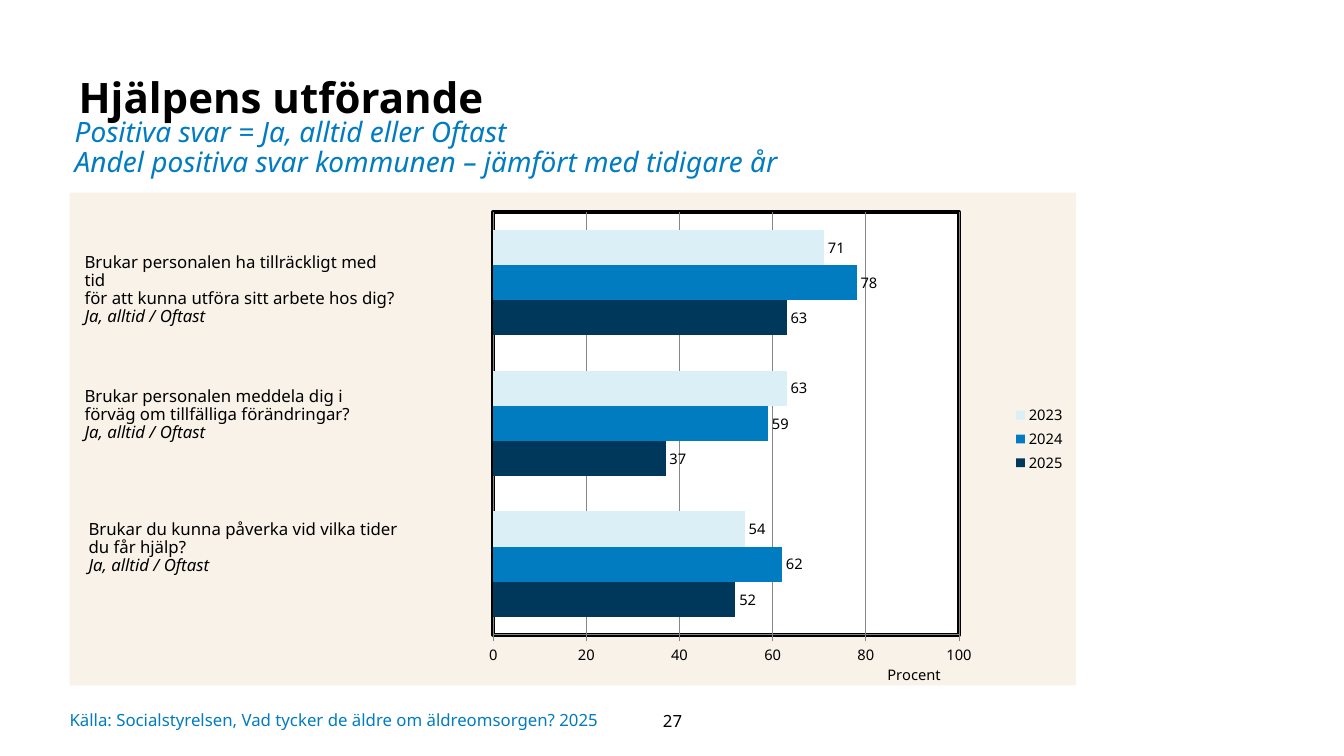
from dataclasses import dataclass

from lxml import etree
from pptx import Presentation
from pptx.chart.chart import Chart
from pptx.chart.data import CategoryChartData
from pptx.dml.color import RGBColor
from pptx.enum.chart import XL_CHART_TYPE as ChartType
from pptx.enum.chart import XL_LABEL_POSITION as LabelSpot
from pptx.enum.chart import XL_LEGEND_POSITION as LegendSpot
from pptx.enum.chart import XL_TICK_MARK as TickMark
from pptx.enum.text import MSO_ANCHOR as Anchor
from pptx.enum.text import MSO_AUTO_SIZE as AutoSize
from pptx.enum.text import PP_ALIGN as Align
from pptx.oxml import parse_xml
from pptx.oxml.ns import nsdecls, qn
from pptx.slide import Slide
from pptx.text.text import TextFrame
from pptx.util import Emu, Pt

PX = 9144  # 100 px to the inch


@dataclass(frozen=True)
class Theme:
    font: str = "Noto Sans"
    black: str = "000000"
    blue: str = "017CC1"
    navy: str = "00385C"
    pale: str = "DBF0F6"
    sand: str = "F8F2E8"
    white: str = "FFFFFF"
    grid: str = "868686"
    title_size: float = 30
    subtitle_size: float = 20
    text_size: float = 12
    chart_size: float = 10.5


@dataclass(frozen=True)
class Area:
    left: int
    top: int
    width: int
    height: int

    def emu(self) -> tuple[Emu, ...]:
        return tuple(Emu(n * PX) for n in (self.left, self.top, self.width, self.height))


@dataclass(frozen=True)
class Question:
    text: str
    area: Area


@dataclass(frozen=True)
class Year:
    name: str
    shares: tuple[int, ...]
    color: str


THEME = Theme()
ANSWER = "Ja, alltid / Oftast"
QUESTIONS = (
    Question("Brukar personalen ha tillräckligt med tid\vför att kunna utföra sitt arbete hos dig?",
             Area(74, 247, 331, 91)),
    Question("Brukar personalen meddela dig i förväg om tillfälliga förändringar?",
             Area(74, 380, 330, 71)),
    Question("Brukar du kunna påverka vid vilka tider du får hjälp?",
             Area(78, 512, 330, 71)),
)
YEARS = (
    Year("2025", (52, 37, 63), THEME.navy),
    Year("2024", (62, 59, 78), THEME.blue),
    Year("2023", (54, 63, 71), THEME.pale),
)


# Text
def format_font(font, size: float, color: str = THEME.black,
                bold: bool = False, italic: bool = False) -> None:
    font.name, font.size = THEME.font, Pt(size)
    font.bold, font.italic = bold, italic
    font.color.rgb = RGBColor.from_string(color)


def write(frame: TextFrame, text: str, *, size: float = THEME.text_size,
          color: str = THEME.black, bold: bool = False, italic: bool = False,
          align: Align = Align.LEFT, spacing: float = 1.0, new: bool = False) -> None:
    para = frame.add_paragraph() if new else frame.paragraphs[0]
    para.text = text
    para.alignment, para.line_spacing = align, spacing
    para.space_before = para.space_after = Pt(0)
    for span in para.runs:
        format_font(span.font, size, color, bold, italic)


def set_frame(frame: TextFrame, insets: tuple[int, int, int, int],
              anchor: Anchor = Anchor.TOP, fit: AutoSize = AutoSize.NONE) -> TextFrame:
    frame.word_wrap, frame.auto_size, frame.vertical_anchor = True, fit, anchor
    (frame.margin_left, frame.margin_top,
     frame.margin_right, frame.margin_bottom) = (Emu(n * PX) for n in insets)
    return frame


def add_box(page: Slide, area: Area, insets: tuple[int, int, int, int] = (10, 5, 10, 5),
            anchor: Anchor = Anchor.TOP, fit: AutoSize = AutoSize.NONE) -> TextFrame:
    box = page.shapes.add_textbox(*area.emu())
    return set_frame(box.text_frame, insets, anchor, fit)


# Chart parts that need XML
def shape_format(fill: str, line: str) -> etree._Element:
    return parse_xml(
        f'<c:spPr {nsdecls("c", "a")}><a:solidFill><a:srgbClr val="{fill}"/></a:solidFill>'
        f'{line}</c:spPr>')


def place(parent: etree._Element, index: int, inner: bool = False, **fractions: float) -> None:
    for old in parent.findall(qn("c:layout")):
        parent.remove(old)
    target = '<c:layoutTarget val="inner"/>' if inner else ""
    modes = '<c:xMode val="edge"/><c:yMode val="edge"/>'
    values = "".join(f'<c:{key} val="{value}"/>' for key, value in fractions.items())
    parent.insert(index, parse_xml(
        f'<c:layout {nsdecls("c")}><c:manualLayout>{target}{modes}{values}'
        '</c:manualLayout></c:layout>'))


def format_areas(chart: Chart) -> None:
    space = chart.element
    space.find(qn("c:chart")).addnext(shape_format(THEME.sand, "<a:ln><a:noFill/></a:ln>"))
    plot_area = space.find(f'{qn("c:chart")}/{qn("c:plotArea")}')
    place(plot_area, 0, inner=True, x=0.421, y=0.04, w=0.463, h=0.857)
    plot_area.append(shape_format(
        THEME.white, '<a:ln w="38100" cmpd="dbl"><a:solidFill>'
        f'<a:srgbClr val="{THEME.black}"/></a:solidFill></a:ln>'))


def format_axes(chart: Chart) -> None:
    chart.category_axis.visible = False
    axis = chart.value_axis
    axis.minimum_scale, axis.maximum_scale, axis.major_unit = 0, 100, 20
    axis.major_tick_mark, axis.minor_tick_mark = TickMark.OUTSIDE, TickMark.NONE
    axis.has_major_gridlines = True
    for line in (axis.format.line, axis.major_gridlines.format.line):
        line.color.rgb = RGBColor.from_string(THEME.grid)
        line.width = Pt(0.75)
    format_font(axis.tick_labels.font, THEME.chart_size)
    write(axis.axis_title.text_frame, "Procent", size=THEME.chart_size)
    place(axis.axis_title._element, 1, x=0.81, y=0.95)


def add_year_chart(page: Slide, area: Area) -> None:
    data = CategoryChartData(number_format="0")
    data.categories = ["1", "2", "3"]
    for year in YEARS:
        data.add_series(year.name, year.shares)
    chart = page.shapes.add_chart(ChartType.BAR_CLUSTERED, *area.emu(), data).chart
    chart.has_title = False
    format_font(chart.font, THEME.chart_size)
    format_areas(chart)
    format_axes(chart)

    chart.has_legend = True
    chart.legend.position = LegendSpot.RIGHT
    chart.legend.include_in_layout = False
    format_font(chart.legend.font, THEME.chart_size)

    plot = chart.plots[0]
    plot.gap_width, plot.overlap, plot.vary_by_categories = 100, 0, False
    for series, year in zip(plot.series, YEARS):
        series.format.fill.solid()
        series.format.fill.fore_color.rgb = RGBColor.from_string(year.color)
        labels = series.data_labels
        labels.show_value, labels.position = True, LabelSpot.OUTSIDE_END
        format_font(labels.font, THEME.chart_size)


def main() -> None:
    deck = Presentation()
    deck.slide_width, deck.slide_height = Emu(1333 * PX), Emu(750 * PX)
    page = deck.slides.add_slide(deck.slide_layouts[5])

    # Heading
    title = page.shapes.title
    title.left, title.top, title.width, title.height = Area(78, 66, 836, 51).emu()
    write(set_frame(title.text_frame, (0, 0, 10, 5)), "Hjälpens utförande",
          size=THEME.title_size, bold=True, spacing=1.1)
    write(add_box(page, Area(74, 117, 708, 61), (0, 0, 0, 0)),
          "Positiva svar = Ja, alltid eller Oftast\v"
          "Andel positiva svar kommunen – jämfört med tidigare år",
          size=THEME.subtitle_size, color=THEME.blue, italic=True, spacing=0.9)

    # Chart with its questions
    add_year_chart(page, Area(69, 191, 998, 493))
    for question in QUESTIONS:
        frame = add_box(page, question.area, fit=AutoSize.SHAPE_TO_FIT_TEXT)
        write(frame, question.text, spacing=0.9)
        write(frame, ANSWER, italic=True, spacing=0.9, new=True)

    # Source and page number
    write(add_box(page, Area(69, 700, 591, 29), (0, 0, 0, 0), Anchor.MIDDLE),
          "Källa: Socialstyrelsen, Vad tycker de äldre om äldreomsorgen? 2025", color=THEME.blue)
    write(add_box(page, Area(616, 695, 102, 40), anchor=Anchor.MIDDLE), "27", align=Align.CENTER)

    deck.save("out.pptx")


if __name__ == "__main__":
    main()
